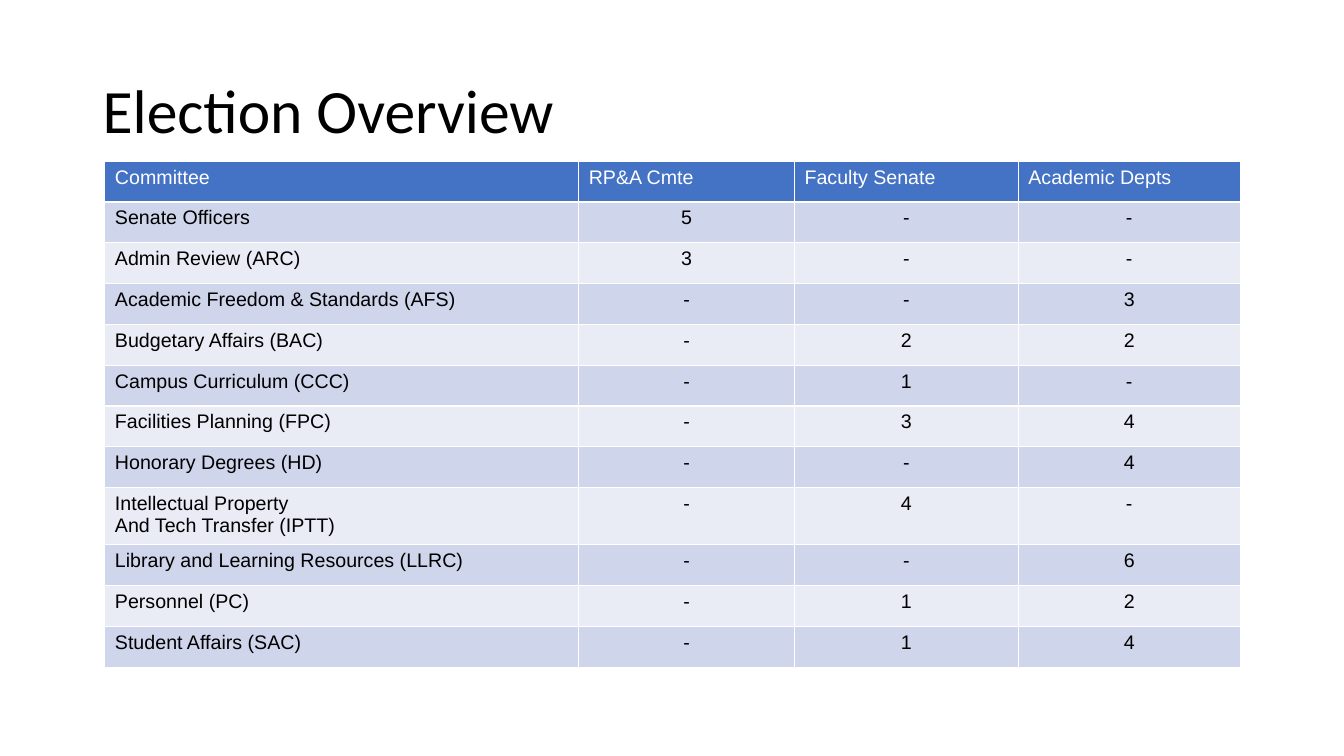
import pptx
import pptx.util
import pptx.dml.color
import pptx.enum.text

Inches = pptx.util.Inches
Pt = pptx.util.Pt
RGB = pptx.dml.color.RGBColor.from_string
CENTER = pptx.enum.text.PP_ALIGN.CENTER

COLORS = {"header": "4472C4", "odd": "CFD5EA", "even": "E9EBF5", "text": "000000", "header_text": "FFFFFF"}
COLUMN_WIDTHS = [4.7, 2.14, 2.22, 2.2]
TABLE_HEIGHT = 4.86
ROWS = [
    ("Committee", "RP&A Cmte", "Faculty Senate", "Academic Depts"),
    ("Senate Officers", "5", "-", "-"),
    ("Admin Review (ARC)", "3", "-", "-"),
    ("Academic Freedom & Standards (AFS)", "-", "-", "3"),
    ("Budgetary Affairs (BAC)", "-", "2", "2"),
    ("Campus Curriculum (CCC)", "-", "1", "-"),
    ("Facilities Planning (FPC)", "-", "3", "4"),
    ("Honorary Degrees (HD)", "-", "-", "4"),
    ("Intellectual Property\nAnd Tech Transfer (IPTT)", "-", "4", "-"),
    ("Library and Learning Resources (LLRC)", "-", "-", "6"),
    ("Personnel (PC)", "-", "1", "2"),
    ("Student Affairs (SAC)", "-", "1", "4"),
]


def style_text(p, font, size, color):
    for r in p.runs:
        r.font.name = font
        r.font.size = Pt(size)
        r.font.bold = False
        r.font.color.rgb = RGB(COLORS[color])


prs = pptx.Presentation()
prs.slide_width = Inches(13.33)
prs.slide_height = Inches(7.5)
s = prs.slides.add_slide(prs.slide_layouts[6])

title = s.shapes.add_textbox(Inches(0.92), Inches(0.4), Inches(11.5), Inches(1.45))
tf = title.text_frame
tf.word_wrap = True
tf.vertical_anchor = pptx.enum.text.MSO_ANCHOR.MIDDLE
tf.text = "Election Overview"
tf.paragraphs[0].line_spacing = 0.9
style_text(tf.paragraphs[0], "Calibri", 44, "text")

table = s.shapes.add_table(
    len(ROWS), len(COLUMN_WIDTHS), Inches(1.04), Inches(1.6),
    Inches(sum(COLUMN_WIDTHS)), Inches(TABLE_HEIGHT),
).table
for column, width in zip(table.columns, COLUMN_WIDTHS):
    column.width = Inches(width)

for i, row in enumerate(ROWS):
    table.rows[i].height = Inches(TABLE_HEIGHT / len(ROWS))
    band = "header" if i == 0 else "odd" if i % 2 else "even"
    for j, value in enumerate(row):
        cell = table.cell(i, j)
        cell.fill.solid()
        cell.fill.fore_color.rgb = RGB(COLORS[band])
        cell.text_frame.text = value
        for p in cell.text_frame.paragraphs:
            if i and j:
                p.alignment = CENTER
            style_text(p, "Arial", 14, "text" if i else "header_text")

prs.save("out.pptx")
